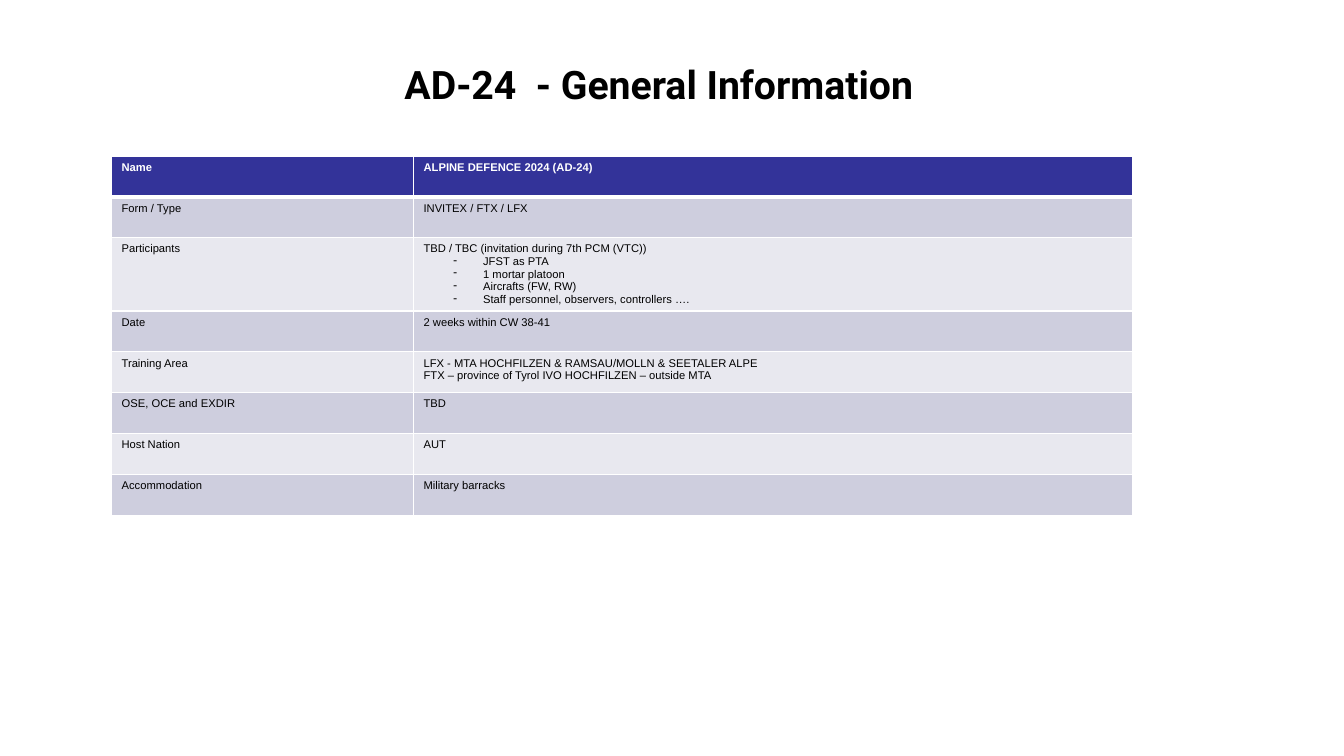
import pptx
import pptx.dml.color
import pptx.enum.text
import pptx.oxml
import pptx.oxml.ns
import pptx.util
from pptx.util import Cm

COLORS = {
    "header": "333399",
    "dark band": "CECEDE",
    "light band": "E8E8EF",
    "white": "FFFFFF",
    "black": "000000",
}

# Lines of a cell that start with "- " become bullets.
EXERCISE_FACTS = [
    ("Name", "ALPINE DEFENCE 2024 (AD-24)"),
    ("Form / Type", "INVITEX / FTX / LFX"),
    ("Participants", "TBD / TBC (invitation during 7th PCM (VTC))\n- JFST as PTA\n"
                     "- 1 mortar platoon\n- Aircrafts (FW, RW)\n"
                     "- Staff personnel, observers, controllers …."),
    ("Date", "2 weeks within CW 38-41"),
    ("Training Area", "LFX - MTA HOCHFILZEN & RAMSAU/MOLLN & SEETALER ALPE\n"
                      "FTX – province of Tyrol IVO HOCHFILZEN – outside MTA"),
    ("OSE, OCE and EXDIR", "TBD"),
    ("Host Nation", "AUT"),
    ("Accommodation", "Military barracks"),
]


class InfoPage:
    """The slide being built, with its fonts and sizes."""

    title_font, title_size = "Roboto", 28
    table_font, table_size = "Arial", 8
    thin_line, header_line = 1, 3

    def __init__(self, deck):
        self.page = deck.slides.add_slide(deck.slide_layouts[6])

    def set_font(self, para, name, size, color, bold):
        font = para.font
        font.name, font.size, font.bold = name, pptx.util.Pt(size), bold
        font.color.rgb = pptx.dml.color.RGBColor.from_string(COLORS[color])

    def add_title(self, text, left, top, width, height):
        box = self.page.shapes.add_textbox(left, top, width, height)
        frame = box.text_frame
        frame.word_wrap = True
        frame.vertical_anchor = pptx.enum.text.MSO_ANCHOR.MIDDLE
        para = frame.paragraphs[0]
        para.text = text
        para.alignment = pptx.enum.text.PP_ALIGN.CENTER
        self.set_font(para, self.title_font, self.title_size, "black", True)

    def add_table(self, rows, left, top, column_widths, row_height):
        frame = self.page.shapes.add_table(len(rows), len(column_widths), left, top,
                                           sum(column_widths), row_height * len(rows))
        table = frame.table
        table.horz_banding = False
        for column, width in zip(table.columns, column_widths):
            column.width = width
        for index, texts in enumerate(rows):
            table.rows[index].height = row_height
            for column, text in enumerate(texts):
                self.fill_cell(table.cell(index, column), text, index)

    def fill_cell(self, cell, text, row):
        header = row == 0
        fill = "header" if header else ("dark band" if row % 2 else "light band")
        cell.fill.solid()
        cell.fill.fore_color.rgb = pptx.dml.color.RGBColor.from_string(COLORS[fill])
        self.add_borders(cell, top=self.header_line if row == 1 else self.thin_line,
                         bottom=self.header_line if header else self.thin_line)
        for index, line in enumerate(text.split("\n")):
            frame = cell.text_frame
            para = frame.add_paragraph() if index else frame.paragraphs[0]
            para.text = line.removeprefix("- ")
            if line.startswith("- "):
                self.add_bullet(para)
            self.set_font(para, self.table_font, self.table_size,
                          "white" if header else "black", header)

    def add_borders(self, cell, top, bottom):
        """Put white border lines ahead of the cell's fill."""
        properties = cell._tc.get_or_add_tcPr()
        widths = {"L": self.thin_line, "R": self.thin_line, "T": top, "B": bottom}
        for position, (side, width) in enumerate(widths.items()):
            properties.insert(position, pptx.oxml.parse_xml(
                f'<a:ln{side} {pptx.oxml.ns.nsdecls("a")} w="{pptx.util.Pt(width)}">'
                f'<a:solidFill><a:srgbClr val="{COLORS["white"]}"/></a:solidFill>'
                f'</a:ln{side}>'))

    def add_bullet(self, para):
        properties = para._p.get_or_add_pPr()
        properties.set("marL", str(Cm(1.5)))
        properties.set("indent", str(-Cm(0.75)))
        properties.append(pptx.oxml.parse_xml(
            f'<a:buChar {pptx.oxml.ns.nsdecls("a")} char="-"/>'))


def main():
    deck = pptx.Presentation()
    deck.slide_width, deck.slide_height = Cm(33.87), Cm(19.05)
    info = InfoPage(deck)
    info.add_table(EXERCISE_FACTS, Cm(2.81), Cm(3.93), (Cm(7.61), Cm(18.12)), Cm(1.03))
    info.add_title("AD-24  - General Information", Cm(4.27), Cm(1.12), Cm(24.66), Cm(2))
    deck.save("out.pptx")


if __name__ == "__main__":
    main()
